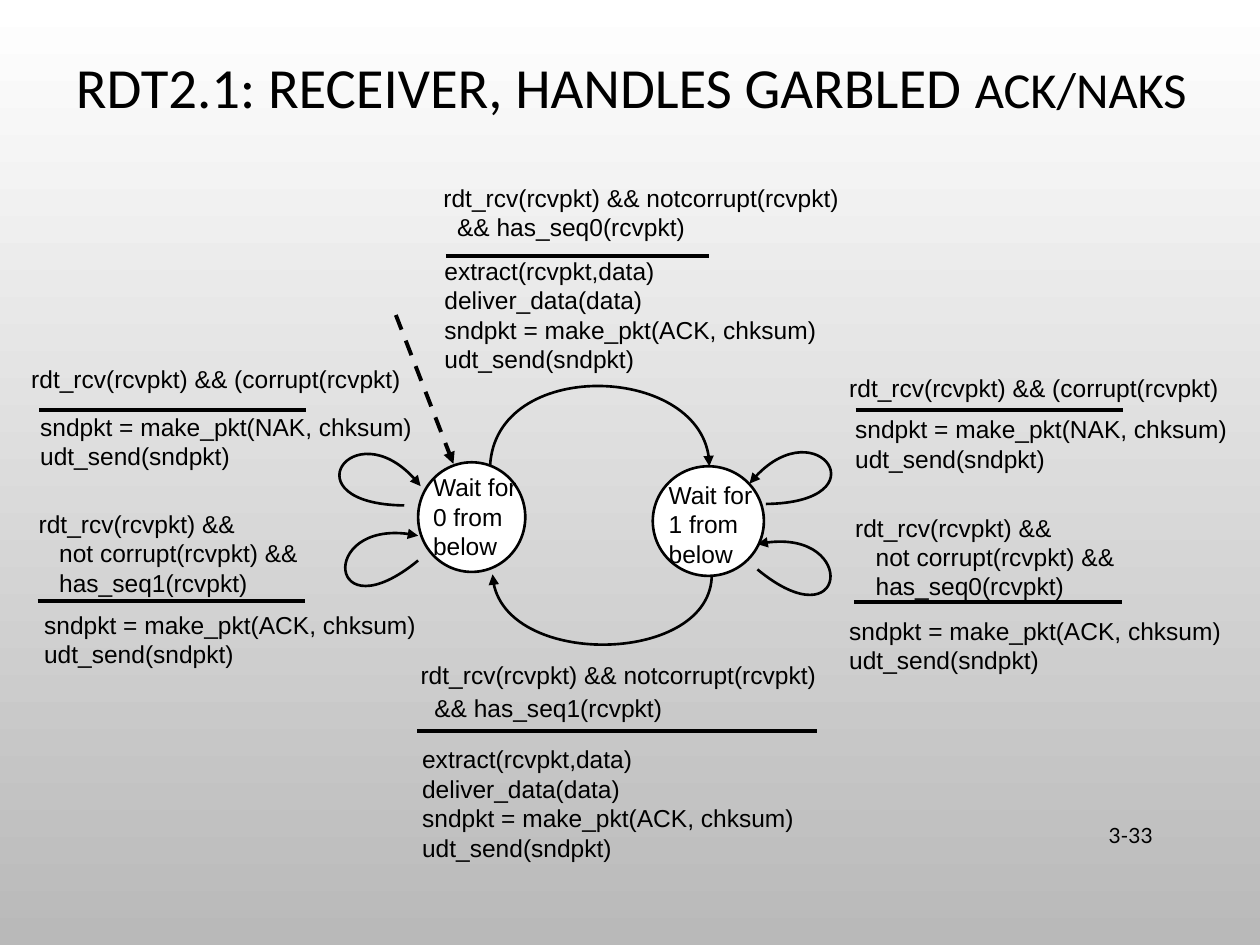
import pptx
import pptx.util
import pptx.dml.color
import pptx.enum.dml
import pptx.enum.shapes
import pptx.enum.text
import pptx.oxml.ns
from lxml import etree

Cm, Pt = pptx.util.Cm, pptx.util.Pt
qn = pptx.oxml.ns.qn
COLORS = {"ink": "000000", "state": "FFFFFF", "top": "FFFFFF", "bottom": "B9B9B9"}
RGB = {name: pptx.dml.color.RGBColor.from_string(code) for name, code in COLORS.items()}


def write(paragraph, text, font="Arial", size=14, indent=0, before=0, align=None):
    if indent:
        paragraph._p.get_or_add_pPr().set("marL", str(Pt(indent)))
    if before:
        paragraph.space_before = Pt(before)
    if align is not None:
        paragraph.alignment = align
    run = paragraph.add_run()
    run.text = text
    run.font.name = font
    run.font.size = Pt(size)
    run.font.color.rgb = RGB["ink"]


def stroke(shape, width, dash=None, arrow=False):
    shape.line.color.rgb = RGB["ink"]
    shape.line.width = Pt(width)
    if dash is not None:
        shape.line.dash_style = dash
    properties = shape._element.spPr
    if arrow:
        etree.SubElement(properties.find(qn("a:ln")), qn("a:tailEnd"), type="triangle")
    etree.SubElement(properties, qn("a:effectLst"))


deck = pptx.Presentation()
deck.slide_width, deck.slide_height = Cm(25.4), Cm(19.05)
slide = deck.slides.add_slide(deck.slide_layouts[5])
shapes = slide.shapes

backdrop = slide.background.fill
backdrop.gradient()
backdrop.gradient_angle = 270
for stop, name in zip(backdrop.gradient_stops, ("top", "bottom")):
    stop.color.rgb = RGB[name]

heading = shapes.title
heading.left, heading.top, heading.width, heading.height = Cm(1.17), Cm(0.51), Cm(23.11), Cm(2.62)
heading.text_frame.vertical_anchor = pptx.enum.text.MSO_ANCHOR.MIDDLE
heading.text_frame.auto_size = pptx.enum.text.MSO_AUTO_SIZE.NONE
heading_line = heading.text_frame.paragraphs[0]
heading_line.line_spacing = 0.9
for text, size in (("RDT2.1: RECEIVER, HANDLES GARBLED ", 32.4), ("ACK/NAKS", 28.8)):
    write(heading_line, text, font="Calibri", size=size, align=pptx.enum.text.PP_ALIGN.CENTER)

transitions = [
    [(9.88, 9.4), (9.98, 7.21), (14.3, 7.34), (14.3, 9.4)],
    [(14.35, 11.58), (14.35, 13.39), (10.01, 13.49), (9.93, 11.58)],
    [(15.44, 10.16), (17.81, 10.13), (16.41, 8.13), (15.11, 9.75)],
    [(15.27, 11.48), (17.09, 12.98), (17.32, 10.54), (15.27, 10.97)],
    [(8.43, 11.3), (6.6, 12.8), (6.4, 10.36), (8.43, 10.8)],
    [(8.15, 10.19), (5.79, 10.16), (7.19, 8.15), (8.48, 9.8)],
]
for points in transitions:
    start, *controls = [(Cm(x), Cm(y)) for x, y in points]
    outline = shapes.build_freeform(*start)
    outline.add_line_segments(controls, close=False)
    transition = outline.convert_to_shape()
    transition.fill.background()
    stroke(transition, 1.5, arrow=True)
    track = transition._element.find(".//" + qn("a:path"))
    bezier = etree.Element(qn("a:cubicBezTo"))
    for segment in track.findall(qn("a:lnTo")):
        bezier.append(segment[0])
        track.remove(segment)
    track.append(bezier)

for left, top, width in ((8.43, 9.32, 2.16), (13.16, 9.4, 2.24)):
    state = shapes.add_shape(
        pptx.enum.shapes.MSO_SHAPE.OVAL, Cm(left), Cm(top), Cm(width), Cm(2.21))
    state.fill.solid()
    state.fill.fore_color.rgb = RGB["state"]
    stroke(state, 1.5)

rules = [
    (8.99, 14.3, 5.16), (8.41, 16.46, 14.73), (0.79, 6.17, 8.26),
    (0.76, 6.15, 12.12), (17.25, 22.63, 8.26), (17.22, 22.61, 12.14),
]
for left, right, y in rules:
    rule = shapes.add_connector(
        pptx.enum.shapes.MSO_CONNECTOR.STRAIGHT, Cm(left), Cm(y), Cm(right), Cm(y))
    stroke(rule, 2.25)

entry = shapes.add_connector(
    pptx.enum.shapes.MSO_CONNECTOR.STRAIGHT, Cm(7.98), Cm(6.35), Cm(9.14), Cm(9.35))
stroke(entry, 2.25, dash=pptx.enum.dml.MSO_LINE.DASH, arrow=True)

send = "udt_send(sndpkt)"
acknowledge = ["sndpkt = make_pkt(ACK, chksum)", send]
reject = ["sndpkt = make_pkt(NAK, chksum)", send]
deliver = ["extract(rcvpkt,data)", "deliver_data(data)", *acknowledge]
intact = "rdt_rcv(rcvpkt) && notcorrupt(rcvpkt)"
corrupt = ["rdt_rcv(rcvpkt) && (corrupt(rcvpkt)"]
duplicate = ["rdt_rcv(rcvpkt) &&", "not corrupt(rcvpkt) &&"]
labels = [
    (8.48, 9.4, 2.24, 1.7, ["Wait for", "0 from below"], {}),
    (13.23, 9.55, 2.24, 1.7, ["Wait for", "1 from below"], {}),
    (8.69, 3.56, 11.05, 1.57, [intact, "&& has_seq0(rcvpkt)"], {"indent": 7.8}),
    (8.71, 5.03, 9.65, 1.96, deliver, {}),
    (8.23, 13.18, 9.96, 1.57, [intact, "&& has_seq1(rcvpkt)"], {"indent": 7.8, "before": 2}),
    (8.26, 14.88, 10.69, 2.77, deliver, {}),
    (0.38, 7.21, 7.98, 1.7, corrupt, {}),
    (16.87, 7.39, 7.98, 1.7, corrupt, {}),
    (0.56, 8.18, 8.41, 1.14, reject, {}),
    (16.99, 8.23, 8.41, 1.14, reject, {}),
    (0.53, 10.13, 7.29, 1.7, duplicate + ["has_seq1(rcvpkt)"], {"indent": 11.7}),
    (16.99, 10.21, 7.29, 1.7, duplicate + ["has_seq0(rcvpkt)"], {"indent": 11.7}),
    (0.64, 12.17, 8.18, 1.14, acknowledge, {}),
    (16.87, 12.29, 8.18, 1.14, acknowledge, {}),
]
for left, top, width, height, lines, continuation in labels:
    label = shapes.add_textbox(Cm(left), Cm(top), Cm(width), Cm(height)).text_frame
    label.word_wrap = True
    write(label.paragraphs[0], lines[0])
    for line in lines[1:]:
        write(label.add_paragraph(), line, **continuation)

page = shapes.add_textbox(Cm(21.89), Cm(16.33), Cm(1.6), Cm(1.02)).text_frame
page.word_wrap = True
page.vertical_anchor = pptx.enum.text.MSO_ANCHOR.MIDDLE
write(page.paragraphs[0], "3-33", font="Lato", size=12, align=pptx.enum.text.PP_ALIGN.RIGHT)

deck.save("out.pptx")
